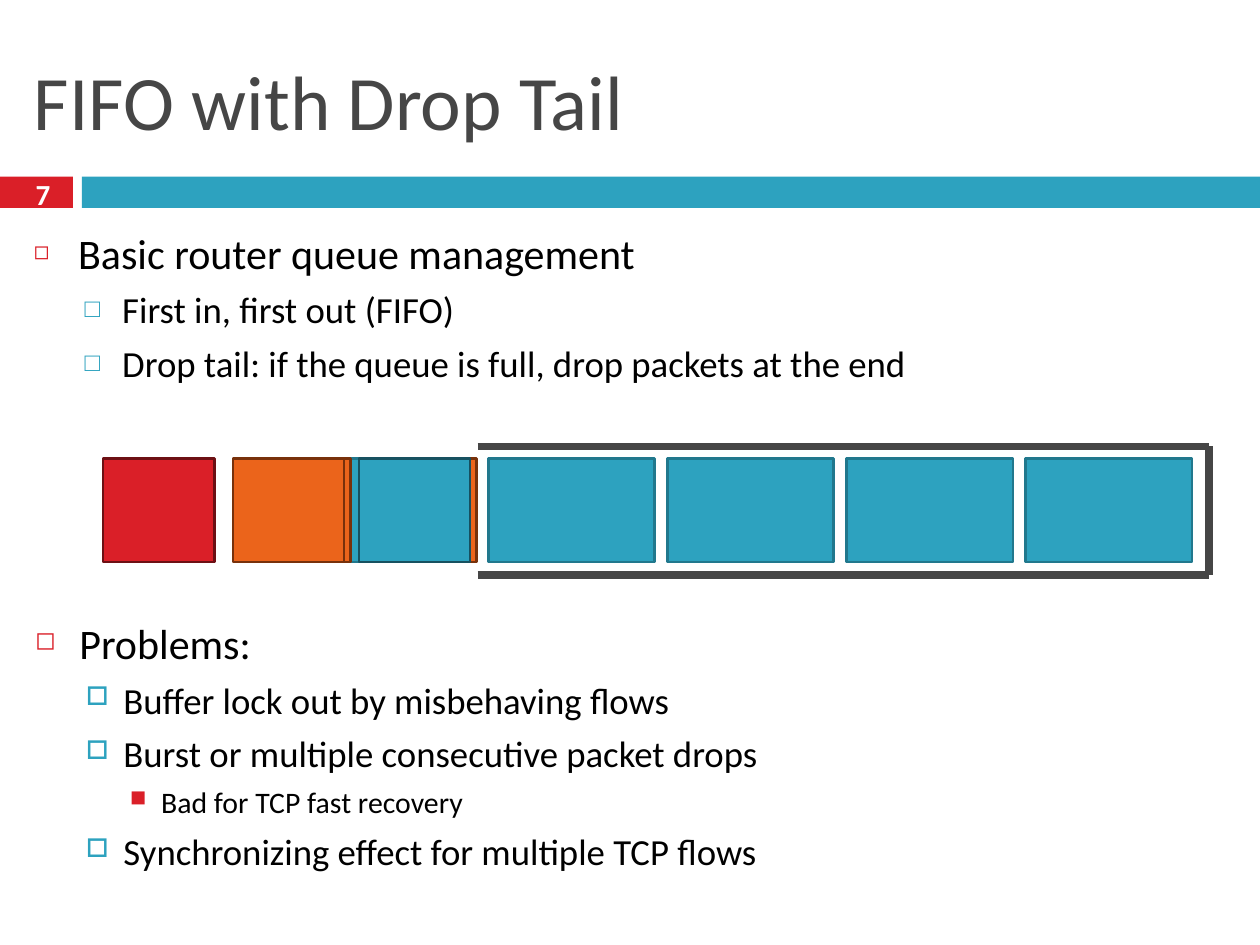
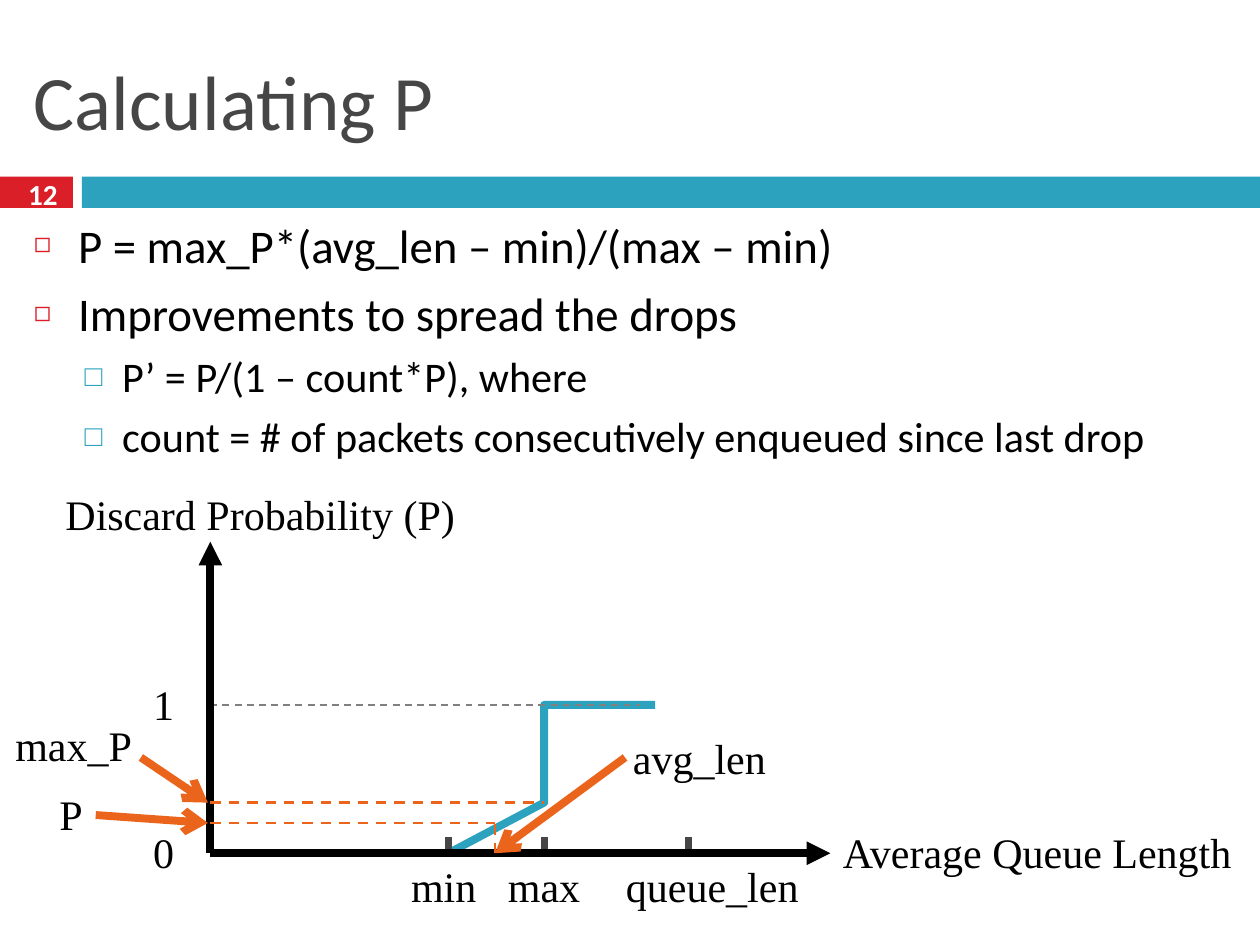
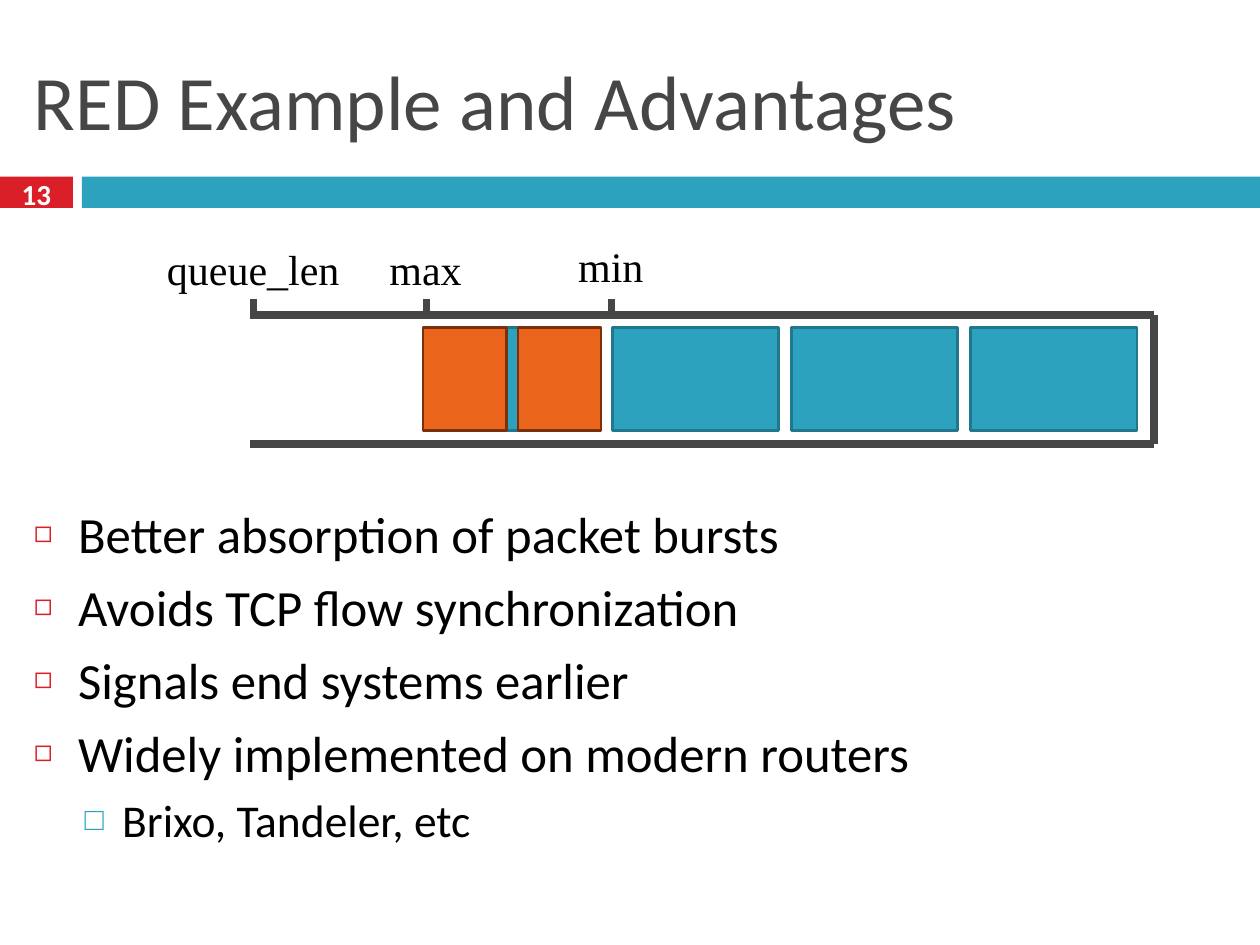
from dataclasses import dataclass
from typing import Any

from lxml.etree import SubElement
from pptx import Presentation
from pptx.dml.color import RGBColor
from pptx.enum.dml import MSO_LINE
from pptx.enum.shapes import MSO_CONNECTOR, MSO_SHAPE
from pptx.enum.text import MSO_ANCHOR, MSO_AUTO_SIZE, PP_ALIGN
from pptx.oxml.ns import qn
from pptx.util import Cm, Pt

COLORS = {
    "red": "DA1F28", "red_edge": "6D1014",
    "teal": "2DA2BF", "teal_edge": "21788D", "teal_dark_edge": "175160",
    "orange": "EB641B", "orange_edge": "78310B",
    "slate": "464646", "gray": "808080", "black": "000000", "white": "FFFFFF",
}
BULLETS = [
    {"margin": 0.89, "indent": -0.89, "before": 7, "char": "◻", "color": "red", "percent": 60},
    {"margin": 1.78, "indent": -0.76, "before": 5.5, "char": "□", "color": "teal", "percent": 70},
    {"margin": 2.54, "indent": -0.63, "before": 5, "char": "■", "color": "red", "percent": 75},
]
BODY_FONT = "Calibri"
LABEL_FONT = "Times New Roman"
PACKET_WIDTH = 3.35
PACKET_HEIGHT = 2.08
PACKET_STEP = 3.61
QUEUE_HEIGHT = 2.6
QUEUE_PADDING = 0.25
TICK_LENGTH = 0.33


def rgb(name):
    return RGBColor.from_string(COLORS[name])


def lengths(*values):
    return [Cm(value) for value in values]


@dataclass
class Deck:
    presentation: Any
    slide: Any = None

    def font(self, paragraph, size, color="black", name=BODY_FONT, bold=False):
        font = paragraph.font
        font.size, font.name, font.bold = Pt(size), name, bold
        font.color.rgb = rgb(color)

    def start(self, title, number, number_left=0.13):
        layout = self.presentation.slide_layouts[1]
        self.slide = self.presentation.slides.add_slide(layout)
        self.rectangle(0, 3.56, 1.47, 0.63, "red")
        self.rectangle(1.65, 3.56, 23.75, 0.63, "teal")
        shape = self.slide.shapes.title
        self.place(shape, 0.43, 0.63, 24.57, 2.75)
        frame = shape.text_frame
        frame.text = title
        frame.auto_size = MSO_AUTO_SIZE.NONE
        frame.vertical_anchor = MSO_ANCHOR.MIDDLE
        frame.paragraphs[0].alignment = PP_ALIGN.LEFT
        self.font(frame.paragraphs[0], 44, "slate")
        self.page_number(number, number_left)

    def place(self, shape, *box):
        shape.left, shape.top, shape.width, shape.height = lengths(*box)

    def page_number(self, number, left):
        frame = self.slide.shapes.add_textbox(*lengths(left, 3.48, 1.47, 0.84)).text_frame
        frame.word_wrap = True
        frame.margin_top = frame.margin_bottom = 0
        frame.vertical_anchor = MSO_ANCHOR.MIDDLE
        frame.text = str(number)
        frame.paragraphs[0].alignment = PP_ALIGN.CENTER
        self.font(frame.paragraphs[0], 16.6, "white", bold=True)

    def body(self, box, items, sizes):
        shape = self.slide.placeholders[1]
        self.place(shape, *box)
        self.fill_list(shape.text_frame, items, sizes)

    def list_box(self, box, items, sizes):
        shape = self.slide.shapes.add_textbox(*lengths(*box))
        self.fill_list(shape.text_frame, items, sizes)

    def fill_list(self, frame, items, sizes):
        frame.word_wrap = True
        frame.auto_size = MSO_AUTO_SIZE.NONE
        frame.text = "\n".join(text for level, text in items)
        for paragraph, (level, text) in zip(frame.paragraphs, items):
            paragraph.level = level
            self.bullet(paragraph, BULLETS[level])
            self.font(paragraph, sizes[level])

    def bullet(self, paragraph, style):
        paragraph.space_before = Pt(style["before"])
        properties = paragraph._p.get_or_add_pPr()
        properties.set("marL", str(Cm(style["margin"])))
        properties.set("indent", str(Cm(style["indent"])))
        color = SubElement(properties, qn("a:buClr"))
        SubElement(color, qn("a:srgbClr"), val=COLORS[style["color"]])
        SubElement(properties, qn("a:buSzPct"), val=str(style["percent"] * 1000))
        SubElement(properties, qn("a:buChar"), char=style["char"])

    def rectangle(self, left, top, width, height, fill, edge=None):
        box = lengths(left, top, width, height)
        shape = self.slide.shapes.add_shape(MSO_SHAPE.RECTANGLE, *box)
        shape.shadow.inherit = False
        shape.fill.solid()
        shape.fill.fore_color.rgb = rgb(fill)
        if edge:
            shape.line.color.rgb = rgb(edge)
            shape.line.width = Pt(1.5)
        else:
            shape.line.fill.background()

    def line(self, start, end, color, width, dashed=False, head=None, shapes=None):
        shapes = shapes or self.slide.shapes
        connector = shapes.add_connector(MSO_CONNECTOR.STRAIGHT, *lengths(*start, *end))
        connector.line.color.rgb = rgb(color)
        connector.line.width = Pt(width)
        if dashed:
            connector.line.dash_style = MSO_LINE.DASH
        if head:
            SubElement(connector.line._get_or_add_ln(), qn("a:tailEnd"), type=head)
        SubElement(connector.element.spPr, qn("a:effectLst"))

    def tick(self, x, base):
        self.line((x, base), (x, base - TICK_LENGTH), "slate", 4)

    def curve(self, points, color, width):
        start, *rest = [lengths(*point) for point in points]
        builder = self.slide.shapes.build_freeform(*start)
        builder.add_line_segments(rest, close=False)
        shape = builder.convert_to_shape()
        shape.shadow.inherit = False
        shape.fill.background()
        shape.line.color.rgb = rgb(color)
        shape.line.width = Pt(width)

    def label(self, text, left, top, width, alignment=PP_ALIGN.CENTER):
        frame = self.slide.shapes.add_textbox(*lengths(left, top, width, 1.27)).text_frame
        frame.word_wrap = False
        frame.auto_size = MSO_AUTO_SIZE.SHAPE_TO_FIT_TEXT
        frame.vertical_anchor = MSO_ANCHOR.MIDDLE
        frame.text = text
        frame.paragraphs[0].alignment = alignment
        self.font(frame.paragraphs[0], 24, name=LABEL_FONT)

    def queue(self, left, right, top, count):
        bottom = top + QUEUE_HEIGHT
        group = self.slide.shapes.add_group_shape()
        for start, end in (
            ((left, top), (right, top)),
            ((left, bottom), (right, bottom)),
            ((right, top), (right, bottom)),
        ):
            self.line(start, end, "slate", 4.5, shapes=group.shapes)
        for index in range(count):
            self.packet(right - 3.7 - index * PACKET_STEP, top, PACKET_WIDTH, "teal")

    def packet(self, left, queue_top, width, fill, edge=None):
        top = queue_top + QUEUE_PADDING
        self.rectangle(left, top, width, PACKET_HEIGHT, fill, edge or f"{fill}_edge")


def drop_tail_slide(deck):
    deck.start("FIFO with Drop Tail", 7)
    sizes = (24, 21, 17)
    deck.body((0.43, 4.45, 24.57, 3.65), [
        (0, "Basic router queue management"),
        (1, "First in, first out (FIFO)"),
        (1, "Drop tail: if the queue is full, drop packets at the end"),
    ], sizes)
    deck.list_box((0.46, 12.32, 24.57, 6.25), [
        (0, "Problems:"),
        (1, "Buffer lock out by misbehaving flows"),
        (1, "Burst or multiple consecutive packet drops"),
        (2, "Bad for TCP fast recovery"),
        (1, "Synchronizing effect for multiple TCP flows"),
    ], sizes)
    queue_top = 9
    deck.queue(9.63, 24.38, queue_top, 5)
    for left, fill, edge in (
        (7.37, "orange", None),
        (4.83, "orange", None),
        (7.24, "teal", "teal_dark_edge"),
        (4.7, "orange", None),
        (2.08, "red", None),
    ):
        deck.packet(left, queue_top, 2.24, fill, edge)


def probability_slide(deck):
    deck.start("Calculating P", 12)
    deck.body((0.43, 4.23, 24.97, 5.29), [
        (0, "P = max_P*(avg_len – min)/(max – min)"),
        (0, "Improvements to spread the drops"),
        (1, "P’ = P/(1 – count*P), where"),
        (1, "count = # of packets consecutively enqueued since last drop"),
    ], (26.8, 24.1))

    axis_x, axis_y = 4.24, 17.2
    min_x, average_x, max_x, queue_x = 9.04, 9.98, 10.97, 13.87
    one_y, max_p_y, p_y = 14.21, 16.18, 16.59
    deck.curve([(min_x, axis_y), (max_x, max_p_y), (max_x, one_y), (13.21, one_y)], "teal", 4.5)
    for x in (min_x, max_x, queue_x):
        deck.tick(x, axis_y)
    deck.line((axis_x, one_y), (12.9, one_y), "gray", 1, dashed=True)
    for end in ((axis_x, 10.92), (16.74, axis_y)):
        deck.line((axis_x, axis_y), end, "black", 4.5, head="triangle")
    for start, end in (
        ((axis_x, max_p_y), (max_x, max_p_y)),
        ((axis_x, p_y), (average_x, p_y)),
        ((average_x, axis_y), (average_x, p_y)),
    ):
        deck.line(start, end, "orange", 1.5, dashed=True)
    for start, end in (
        ((1.93, 16.43), (4.19, p_y)),
        ((2.84, 15.27), (4.19, max_p_y)),
        ((12.6, 15.27), (average_x, axis_y)),
    ):
        deck.line(start, end, "orange", 4.5, head="arrow")

    for text, left, top, width in (
        ("Discard Probability (P)", 1.07, 9.73, 8.43),
        ("0", 2.84, 16.54, 0.94),
        ("1", 2.84, 13.56, 0.94),
        ("Average Queue Length", 16.74, 16.54, 8.41),
        ("queue_len", 12.37, 17.22, 4.01),
    ):
        deck.label(text, left, top, width, PP_ALIGN.LEFT)
    for text, left, top, width in (
        ("min", 8.03, 17.22, 1.83),
        ("max", 9.98, 17.22, 1.98),
        ("max_P", 0.05, 14.38, 2.87),
        ("P", 0.94, 15.77, 0.99),
        ("avg_len", 12.5, 14.63, 3.2),
    ):
        deck.label(text, left, top, width)


def advantages_slide(deck):
    deck.start("RED Example and Advantages", 13, 0)
    deck.body((0.43, 10, 24.57, 8.61), [
        (0, "Better absorption of packet bursts"),
        (0, "Avoids TCP flow synchronization"),
        (0, "Signals end systems earlier"),
        (0, "Widely implemented on modern routers"),
        (1, "Brixo, Tandeler, etc"),
    ], (29, 26))
    queue_top = 6.35
    deck.queue(5.03, 23.27, queue_top, 4)
    for left in (10.44, 8.53):
        deck.packet(left, queue_top, 1.68, "orange")
    for text, tick_x, left, top, width in (
        ("min", 12.32, 11.4, 4.72, 1.83),
        ("max", 8.59, 7.59, 4.78, 1.98),
        ("queue_len", 5.11, 3.1, 4.78, 4.01),
    ):
        deck.tick(tick_x, queue_top)
        deck.label(text, left, top, width)


def main():
    presentation = Presentation()
    presentation.slide_width, presentation.slide_height = lengths(25.4, 19.05)
    deck = Deck(presentation)
    drop_tail_slide(deck)
    probability_slide(deck)
    advantages_slide(deck)
    presentation.save("out.pptx")


if __name__ == "__main__":
    main()
